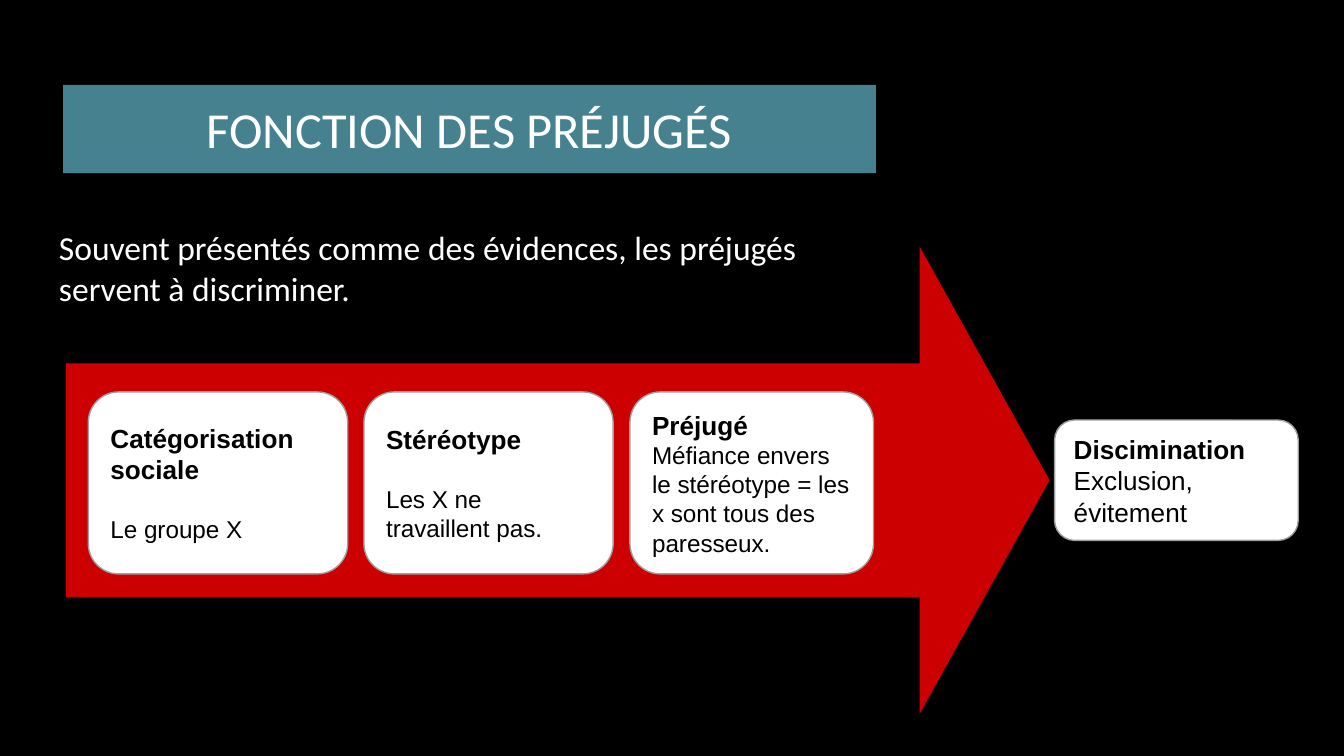
from pptx import Presentation
from pptx.dml.color import RGBColor
from pptx.enum.shapes import MSO_SHAPE
from pptx.enum.text import MSO_ANCHOR, PP_ALIGN
from pptx.util import Pt

INSET = 7.2
BLANK_LINE = 16  # height of one 14 pt line


def color(hex_code):
    return RGBColor.from_string(hex_code)


def add_shape(s, kind, x, y, w, h, fill, line=None, adjustments=()):
    sp = s.shapes.add_shape(kind, Pt(x), Pt(y), Pt(w), Pt(h))
    sp.shadow.inherit = False
    for i, value in enumerate(adjustments):
        sp.adjustments[i] = value
    sp.fill.solid()
    sp.fill.fore_color.rgb = color(fill)
    if line:
        sp.line.color.rgb = color(line)
        sp.line.width = Pt(0.75)
    else:
        sp.line.fill.background()
    return sp


def set_frame(tf, anchor):
    tf.word_wrap = True
    tf.vertical_anchor = anchor
    tf.margin_left = tf.margin_right = Pt(INSET)
    tf.margin_top = tf.margin_bottom = Pt(INSET)


def add_text(tf, text, size, font="Arial", fill="000000", bold=False,
             align=PP_ALIGN.LEFT, before=0):
    """Add a paragraph, using the frame's empty first one when it is free."""
    p = tf.paragraphs[0]
    if p.runs:
        p = tf.add_paragraph()
    p.alignment = align
    p.space_before = Pt(before)
    r = p.add_run()
    r.text = text
    r.font.name = font
    r.font.size = Pt(size)
    r.font.bold = bold
    r.font.color.rgb = color(fill)


def add_text_box(s, x, y, w, h, lines, **fmt):
    tf = s.shapes.add_textbox(Pt(x), Pt(y), Pt(w), Pt(h)).text_frame
    set_frame(tf, MSO_ANCHOR.TOP)
    for line in lines:
        add_text(tf, line, font="Calibri", fill="FFFFFF", **fmt)


def add_card(s, x, y, w, h, heading, body, body_size=13, gap=0):
    sp = add_shape(s, MSO_SHAPE.ROUNDED_RECTANGLE, x, y, w, h,
                   "FFFFFF", line="9E9E9E", adjustments=[0.167])
    tf = sp.text_frame
    set_frame(tf, MSO_ANCHOR.MIDDLE)
    add_text(tf, heading, 14, bold=True)
    add_text(tf, body, body_size, before=gap)


def main():
    prs = Presentation()
    prs.slide_width, prs.slide_height = Pt(720), Pt(405)
    s = prs.slides.add_slide(prs.slide_layouts[6])
    s.background.fill.solid()
    s.background.fill.fore_color.rgb = color("000000")

    add_text_box(s, 24.5, 114.5, 671, 60,
                 ["Souvent présentés comme des évidences, les préjugés",
                  "servent à discriminer."], size=18)

    add_shape(s, MSO_SHAPE.RIGHT_ARROW, 35.3, 132, 527, 250.5, "CC0000",
              adjustments=[0.5, 0.278])
    steps = [
        (47.3, 139, "Catégorisation sociale", "Le groupe X", BLANK_LINE),
        (195, 133.5, "Stéréotype", "Les X ne travaillent pas.", BLANK_LINE),
        (337.5, 130.5, "Préjugé",
         "Méfiance envers le stéréotype = les x sont tous des paresseux.", 0),
    ]
    for x, w, heading, body, gap in steps:
        add_card(s, x, 210, w, 97.5, heading, body, gap=gap)
    add_card(s, 565, 225, 130.5, 64.5, "Discimination",
             "Exclusion, évitement", body_size=14)

    add_shape(s, MSO_SHAPE.RECTANGLE, 33.75, 45.4, 435.5, 47.3, "45818E")
    add_text_box(s, 48, 45.4, 407, 47.5, ["FONCTION DES PRÉJUGÉS"],
                 size=27, align=PP_ALIGN.CENTER)

    prs.save("out.pptx")


if __name__ == "__main__":
    main()
